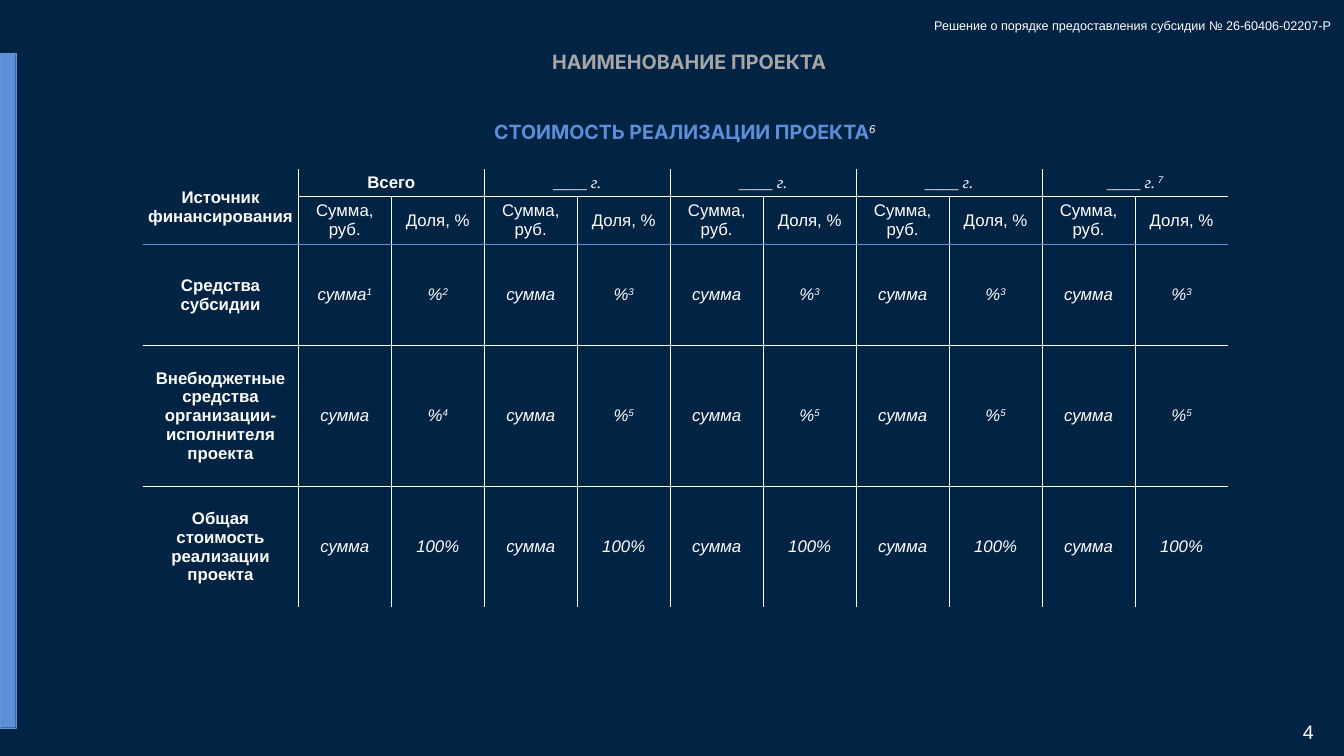
from lxml import etree
from pptx import Presentation
from pptx.dml.color import RGBColor
from pptx.enum.shapes import MSO_SHAPE
from pptx.enum.text import MSO_ANCHOR, MSO_AUTO_SIZE, PP_ALIGN
from pptx.oxml.ns import qn
from pptx.util import Inches, Pt

RECTANGLE = MSO_SHAPE.RECTANGLE
MIDDLE, TOP = MSO_ANCHOR.MIDDLE, MSO_ANCHOR.TOP
LEFT, CENTER, RIGHT = PP_ALIGN.LEFT, PP_ALIGN.CENTER, PP_ALIGN.RIGHT
FIT_SHAPE = MSO_AUTO_SIZE.SHAPE_TO_FIT_TEXT

NAVY = RGBColor(0x01, 0x23, 0x44)
BLUE = RGBColor(0x5E, 0x8E, 0xD7)
BAR_EDGE = RGBColor(0x5B, 0x9B, 0xD5)
GRAY = RGBColor(0xA6, 0xA6, 0xA6)
WHITE = RGBColor(0xFF, 0xFF, 0xFF)

DECISION = "Решение о порядке предоставления субсидии № 26-60406-02207-Р"
PROJECT = "НАИМЕНОВАНИЕ ПРОЕКТА"
TITLE, TITLE_NOTE = "СТОИМОСТЬ РЕАЛИЗАЦИИ ПРОЕКТА", "6"
PAGE = "4"

SOURCE_HEADING = "Источник финансирования"
TOTAL_HEADING = "Всего"
YEAR, YEAR_NOTE = "____ г.", " 7"
PERIODS = 5
MEASURES = ("Сумма, руб.", "Доля, %")
# Source, then (value, footnote) pairs for the total and for each year
SOURCES = [
    ("Средства субсидии",
     (("сумма", "1"), ("%", "2")), (("сумма", ""), ("%", "3"))),
    ("Внебюджетные средства организации-исполнителя проекта",
     (("сумма", ""), ("%", "4")), (("сумма", ""), ("%", "5"))),
    ("Общая стоимость реализации проекта",
     (("сумма", ""), ("100%", "")), (("сумма", ""), ("100%", ""))),
]
SOURCE_WIDTH, MEASURE_WIDTH = 3.09, 1.845
ROW_HEIGHTS = (0.53, 0.96, 2, 2.8, 2.4)
LAST_ROW, LAST_COLUMN = len(ROW_HEIGHTS) - 1, 2 * PERIODS


def add_run(paragraph, text, size, color=WHITE, font="Arial", bold=False,
            italic=False, raised=False):
    run = paragraph.add_run()
    run.text = text
    run.font.size = Pt(size)
    run.font.name = font
    run.font.bold = bold
    run.font.italic = italic
    run.font.color.rgb = color
    if raised:
        run.font._element.set("baseline", "30000")


def add_label(slide, left, top, width, height, align, inset=(0.1, 0.05),
              anchor=TOP, wrap=True, auto_size=FIT_SHAPE):
    """Add an empty text box and return its paragraph."""
    box = slide.shapes.add_textbox(Inches(left), Inches(top),
                                   Inches(width), Inches(height))
    frame = box.text_frame
    frame.word_wrap = wrap
    frame.auto_size = auto_size
    frame.vertical_anchor = anchor
    frame.margin_left = frame.margin_right = Inches(inset[0])
    frame.margin_top = frame.margin_bottom = Inches(inset[1])
    frame.paragraphs[0].alignment = align
    return frame.paragraphs[0]


def line_below(row, column):
    """Colour of the rule under a cell; None at the edge or inside a merge."""
    if row in (-1, LAST_ROW) or (row == 0 and column == 0):
        return None
    return BLUE if row == 1 else WHITE


def line_right(row, column):
    """Colour of the rule right of a cell; None at the edge or inside a merge."""
    if column in (-1, LAST_COLUMN) or (row == 0 and column % 2):
        return None
    return WHITE


def format_cell(cell, row, column):
    borders = {
        "a:lnL": line_right(row, column - 1),
        "a:lnR": line_right(row, column),
        "a:lnT": line_below(row - 1, column),
        "a:lnB": line_below(row, column),
    }
    properties = cell._tc.get_or_add_tcPr()
    for tag, color in borders.items():
        border = etree.SubElement(properties, qn(tag), w=str(Pt(1)))
        if color is None:
            etree.SubElement(border, qn("a:noFill"))
        else:
            fill = etree.SubElement(border, qn("a:solidFill"))
            etree.SubElement(fill, qn("a:srgbClr"), val=str(color))
    cell.fill.background()
    cell.vertical_anchor = MIDDLE
    cell.margin_left = cell.margin_right = Inches(0.07)
    cell.margin_top = cell.margin_bottom = 0
    cell.text_frame.paragraphs[0].alignment = CENTER


def add_cost_table(slide):
    width = SOURCE_WIDTH + 2 * PERIODS * MEASURE_WIDTH
    table = slide.shapes.add_table(
        len(ROW_HEIGHTS), 1 + 2 * PERIODS, Inches(2.83), Inches(3.36),
        Inches(width), Inches(sum(ROW_HEIGHTS))).table
    table.first_row = table.horz_banding = False
    for index, column in enumerate(table.columns):
        column.width = Inches(MEASURE_WIDTH if index else SOURCE_WIDTH)
    for row, height in zip(table.rows, ROW_HEIGHTS):
        row.height = Inches(height)
    for r in range(len(table.rows)):
        for c in range(len(table.columns)):
            format_cell(table.cell(r, c), r, c)

    def write(row, column, text, **style):
        add_run(table.cell(row, column).text_frame.paragraphs[0], text, 24, **style)

    table.cell(0, 0).merge(table.cell(1, 0))
    write(0, 0, SOURCE_HEADING, bold=True)
    for period in range(PERIODS):
        first = 1 + 2 * period
        table.cell(0, first).merge(table.cell(0, first + 1))
        if period == 0:
            write(0, first, TOTAL_HEADING, bold=True)
        else:
            write(0, first, YEAR, font="Times New Roman", italic=True)
        for offset, measure in enumerate(MEASURES):
            write(1, first + offset, measure)
    write(0, LAST_COLUMN - 1, YEAR_NOTE, italic=True, raised=True)

    for row, (source, total, yearly) in enumerate(SOURCES, start=2):
        write(row, 0, source, bold=True)
        values = total + yearly * (PERIODS - 1)
        for column, (value, note) in enumerate(values, start=1):
            write(row, column, value, italic=True)
            if note:
                write(row, column, note, italic=True, raised=True)


def main():
    deck = Presentation()
    deck.slide_width, deck.slide_height = Inches(26.67), Inches(15)
    slide = deck.slides.add_slide(deck.slide_layouts[6])
    slide.background.fill.solid()
    slide.background.fill.fore_color.rgb = NAVY

    side_bar = slide.shapes.add_shape(RECTANGLE, 0, Inches(1.06),
                                      Inches(0.31), Inches(13.38))
    side_bar.shadow.inherit = False
    side_bar.fill.solid()
    side_bar.fill.fore_color.rgb = BLUE
    side_bar.line.color.rgb = BAR_EDGE
    side_bar.line.width = Pt(0.25)

    page = add_label(slide, 25.39, 14.22, 0.81, 0.61, RIGHT, inset=(0.13, 0.13),
                     anchor=MIDDLE, auto_size=MSO_AUTO_SIZE.NONE)
    add_run(page, PAGE, 28)

    title = add_label(slide, 7.02, 2.28, 13.14, 0.67, CENTER, inset=(0.1, 0.1))
    add_run(title, TITLE, 28, BLUE, "Inter", bold=True)
    add_run(title, TITLE_NOTE, 28, italic=True, raised=True)

    add_cost_table(slide)

    project = add_label(slide, 1.92, 0.94, 23.51, 0.58, CENTER)
    add_run(project, PROJECT, 28.2, GRAY, "Inter", bold=True)

    decision = add_label(slide, 18.44, 0.3, 8.22, 0.4, LEFT, wrap=False)
    add_run(decision, DECISION, 18)

    deck.save("out.pptx")


if __name__ == "__main__":
    main()
